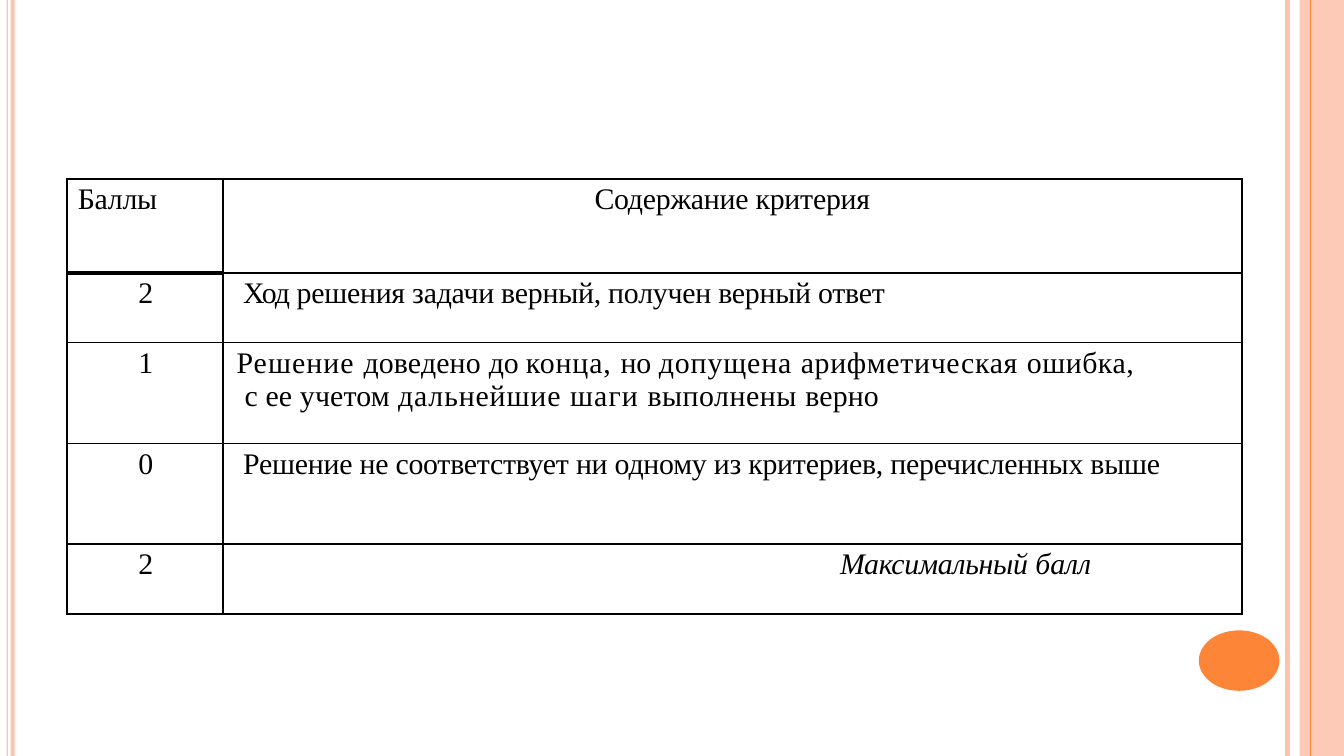
"""Build a slide with a table of scoring criteria framed by peach side stripes."""
from lxml import etree
from pptx import Presentation, util as u
from pptx.dml.color import RGBColor
from pptx.enum import shapes, text
from pptx.oxml import ns

COLUMNS, ROWS = 1000, 562.5
UNIT = u.Inches(0.01)
PEACH, ORANGE, BLACK = "FDC3AD", "FD8537", "000000"
LEFT, RIGHT, CENTER = text.PP_ALIGN.LEFT, text.PP_ALIGN.RIGHT, text.PP_ALIGN.CENTER


def grid(count):
    return u.Emu(int(count * UNIT))


def paint(color_format, color):
    color_format.rgb = RGBColor.from_string(color)


deck = Presentation()
deck.slide_width, deck.slide_height = grid(COLUMNS), grid(ROWS)
page = deck.slides.add_slide(deck.slide_layouts[6])

lines = [(958, PEACH, 3), (975, ORANGE, 0.72)]
solids = [
    (shapes.MSO_SHAPE.OVAL, 892, 469, 60, 45, ORANGE, 100),
    (shapes.MSO_SHAPE.RECTANGLE, 5, 0, 1, ROWS, PEACH, 100),
    (shapes.MSO_SHAPE.RECTANGLE, 8, 0, 3, ROWS, PEACH, 100),
    (shapes.MSO_SHAPE.RECTANGLE, 967, 0, 33, ROWS, PEACH, 87),
]
for kind, left, top, width, height, color, opacity in solids:
    solid = page.shapes.add_shape(kind, grid(left), grid(top), grid(width), grid(height))
    solid.shadow.inherit = False
    solid.line.fill.background()
    solid.fill.solid()
    paint(solid.fill.fore_color, color)
    if opacity < 100:
        tint = solid.fill._xPr.find(".//" + ns.qn("a:srgbClr"))
        etree.SubElement(tint, ns.qn("a:alpha"), val=str(opacity * 1000))

for left, color, weight in lines:
    stripe = page.shapes.add_connector(
        shapes.MSO_CONNECTOR.STRAIGHT, grid(left), 0, grid(left), grid(ROWS))
    paint(stripe.line.color, color)
    stripe.line.width = u.Pt(weight)
    etree.SubElement(stripe._element.spPr, ns.qn("a:effectLst"))

widths, heights = [116, 758], [70, 52, 75, 75, 52]
scores = [("Баллы", -10), ("2", 0), ("1", 0), ("0", 0), ("2", 0)]
criteria = [
    [(CENTER, 0, [("Содержание критерия", -10)])],
    [(LEFT, 15, [("Ход ", -50), ("решения задачи верный, получен верный ответ", -10)])],
    [(LEFT, 10, [("Решение ", 60), ("доведено ", 10), ("до ", -10), ("конца, ", 50),
                 ("но ", 0), ("допущена", 50), (" арифметическая ", 40), ("ошибка,", 30)]),
     (LEFT, 16, [("с ее учетом ", 10), ("дальнейшие ", 50), ("шаги ", 60),
                 ("выполнены ", 30), ("верно", 10)])],
    [(LEFT, 15, [("Решение не соответствует ни одному из критериев, перечисленных выше", -10)])],
    [(LEFT, 459, [("Максимальный ", -10), ("балл", 0)])],
]

table = page.shapes.add_table(
    len(heights), len(widths), grid(50), grid(133), grid(sum(widths)), grid(sum(heights))).table
table.first_row = table.horz_banding = False
for column, width in zip(table.columns, widths):
    column.width = grid(width)

for row, height in enumerate(heights):
    table.rows[row].height = grid(height)
    score_paras = [(RIGHT, 49 if row == 0 else 52, [scores[row]])]
    for col, paras in enumerate([score_paras, criteria[row]]):
        cell = table.cell(row, col)
        cell.margin_left = cell.margin_right = cell.margin_bottom = 0
        cell.margin_top = grid(3)
        for index, (align, indent, spans) in enumerate(paras):
            para = cell.text_frame.add_paragraph() if index else cell.text_frame.paragraphs[0]
            para.alignment = align
            para.space_before = u.Pt(0 if index else 2.2)
            para.font.name, para.font.size = "Times New Roman", u.Pt(16)
            para.font.italic = row == len(heights) - 1 and col == 1
            paint(para.font.color, BLACK)
            para._p.get_or_add_pPr().set("marR" if align == RIGHT else "marL", str(grid(indent)))
            for words, spacing in spans:
                span = para.add_run()
                span.text = words
                span.font._element.set("spc", str(spacing))
        for side in "LRTB":
            heavy = col == 0 and (row, side) in [(0, "B"), (1, "T")]
            border = etree.SubElement(cell._tc.get_or_add_tcPr(), ns.qn("a:ln" + side),
                                      w=str(u.Pt(2.25 if heavy else 1)))
            fill = etree.SubElement(border, ns.qn("a:solidFill"))
            etree.SubElement(fill, ns.qn("a:srgbClr"), val=BLACK)
        cell.fill.background()

deck.save("out.pptx")
